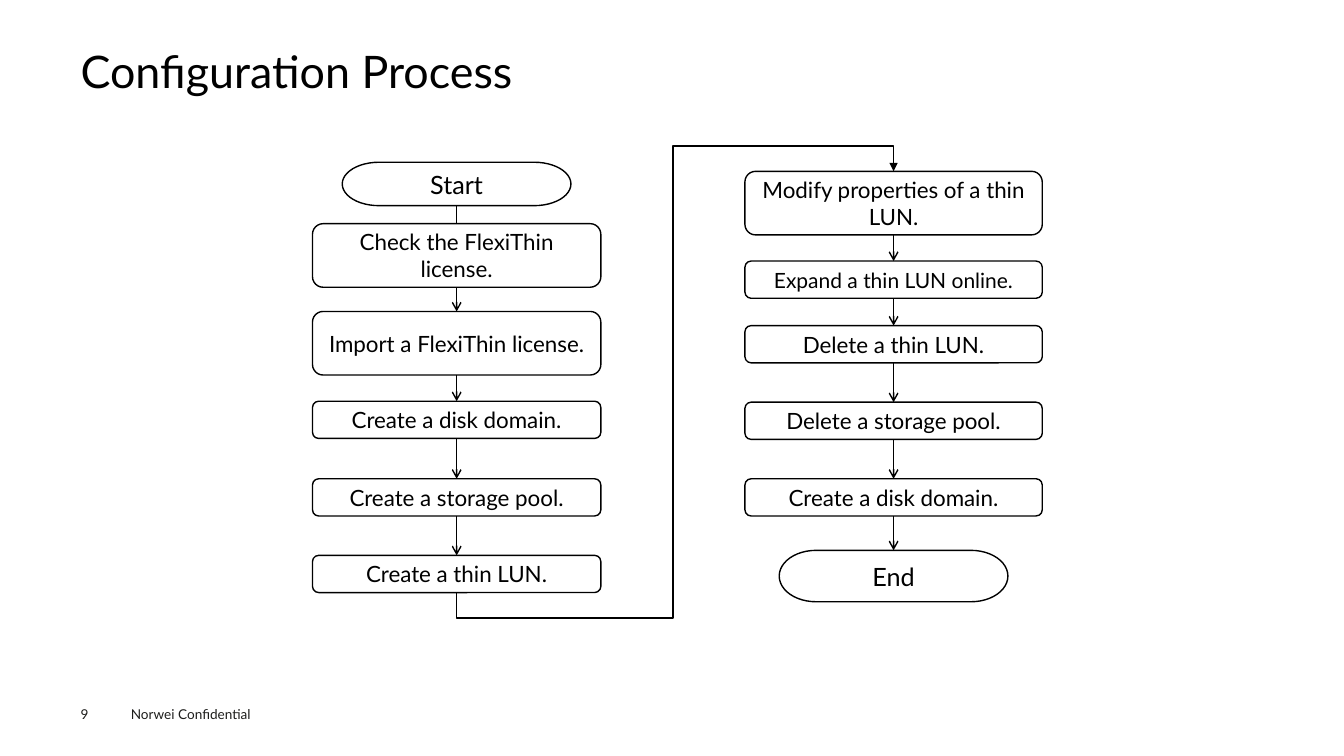
import pptx
import pptx.util
import pptx.dml.color
import pptx.enum.shapes
import pptx.enum.text
import pptx.oxml.ns
import lxml.etree

Pt = pptx.util.Pt
SHAPE = pptx.enum.shapes.MSO_SHAPE
LINK = pptx.enum.shapes.MSO_CONNECTOR
ALIGN = pptx.enum.text.PP_ALIGN
ANCHOR = pptx.enum.text.MSO_ANCHOR
BLACK = pptx.dml.color.RGBColor(0x00, 0x00, 0x00)
WHITE = pptx.dml.color.RGBColor(0xFF, 0xFF, 0xFF)
GRAY = pptx.dml.color.RGBColor(0x1D, 0x1D, 0x1B)
FONT = "Lato"
TALL, LOW = 45.4, 26.6
CAP = 163.4

LEFT = [
    ("Start", 115.9, 31, 18),
    ("Check the FlexiThin license.", 159.8, TALL, 16),
    ("Import a FlexiThin license.", 222.5, TALL, 16),
    ("Create a disk domain.", 286.6, LOW, 16),
    ("Create a storage pool.", 342, LOW, 16),
    ("Create a thin LUN.", 396.7, LOW, 16),
]
RIGHT = [
    ("Modify properties of a thin LUN.", 122.4, TALL, 16),
    ("Expand a thin LUN online.", 186.5, LOW, 15),
    ("Delete a thin LUN.", 232.6, LOW, 16),
    ("Delete a storage pool.", 287.3, LOW, 16),
    ("Create a disk domain.", 342, LOW, 16),
    ("End", 393.1, 36.7, 18),
]


def write(frame, text, size, color):
    para = frame.paragraphs[0]
    run = para.add_run()
    run.text = text
    run.font.size = Pt(size)
    run.font.name = FONT
    run.font.color.rgb = color
    return para


def inset(frame, side, top):
    frame.margin_left = frame.margin_right = Pt(side)
    frame.margin_top = frame.margin_bottom = Pt(top)


def label(slide, box, text, size, color, side=0, top=0):
    frame = slide.shapes.add_textbox(*map(Pt, box)).text_frame
    frame.word_wrap = True
    inset(frame, side, top)
    return write(frame, text, size, color)


def step(slide, mid, width, item):
    text, top, height, size = item
    cap = text in ("Start", "End")
    if cap:
        width = CAP
    kind = SHAPE.FLOWCHART_TERMINATOR if cap else SHAPE.ROUNDED_RECTANGLE
    shape = slide.shapes.add_shape(
        kind, Pt(mid - width / 2), Pt(top), Pt(width), Pt(height))
    shape.shadow.inherit = False
    shape.fill.solid()
    shape.fill.fore_color.rgb = WHITE
    shape.line.color.rgb = BLACK
    shape.line.width = Pt(1)
    frame = shape.text_frame
    frame.word_wrap = True
    frame.vertical_anchor = ANCHOR.MIDDLE
    if not cap:
        inset(frame, 6.5, 3)
    write(frame, text, size, BLACK).alignment = ALIGN.CENTER
    return shape


def style(link, head):
    link.line.color.rgb = BLACK
    link.line.width = Pt(1)
    if head:
        tail = lxml.etree.SubElement(
            link.line._get_or_add_ln(), pptx.oxml.ns.qn("a:tailEnd"))
        tail.set("type", head)
    lxml.etree.SubElement(
        link._element.spPr, pptx.oxml.ns.qn("a:effectLst"))


def column(slide, mid, width, items):
    steps = [step(slide, mid, width, item) for item in items]
    for upper, lower in zip(steps, steps[1:]):
        link = slide.shapes.add_connector(LINK.STRAIGHT, 0, 0, 0, 0)
        link.begin_connect(upper, 2)
        link.end_connect(lower, 0)
        style(link, None if upper.text_frame.text == "Start" else "arrow")
    return steps


def bridge(slide, last, first):
    x1 = last.left + last.width // 2
    y1 = last.top + last.height
    x2 = first.left + first.width // 2
    y2 = first.top
    wide, high = y1 - y2, x2 - x1
    left = (x1 + x2 - wide) // 2
    top = (y1 + y2 - high) // 2
    link = slide.shapes.add_connector(
        LINK.ELBOW, left + wide, top + high, left, top)
    form = link._element.spPr.find(pptx.oxml.ns.qn("a:xfrm"))
    form.set("rot", "5400000")
    geom = link._element.spPr.find(pptx.oxml.ns.qn("a:prstGeom"))
    geom.set("prst", "bentConnector5")
    bends = geom.find(pptx.oxml.ns.qn("a:avLst"))
    for spot, value in enumerate((-6000, 49500, 106000), 1):
        guide = lxml.etree.SubElement(bends, pptx.oxml.ns.qn("a:gd"))
        guide.set("name", f"adj{spot}")
        guide.set("fmla", f"val {value}")
    style(link, "triangle")


def footer(slide, left, top):
    label(slide, (left, top + 3.6, 39.6, 11.5), "9", 9.7, GRAY)
    label(slide, (left + 28.8, top, 115.2, 19.4),
          "Norwei Confidential", 9.7, GRAY, 7.2, 3.6)


def main():
    deck = pptx.Presentation()
    deck.slide_width, deck.slide_height = Pt(960), Pt(540)
    slide = deck.slides.add_slide(deck.slide_layouts[6])
    title = label(slide, (57.6, 35.3, 844.6, 38.9),
                  "Configuration Process", 32, BLACK)
    title.line_spacing = 0.9
    left = column(slide, 326.2, 206, LEFT)
    right = column(slide, 638.3, 212.4, RIGHT)
    bridge(slide, left[-1], right[0])
    footer(slide, 57.6, 500.4)
    deck.save("out.pptx")


if __name__ == "__main__":
    main()
